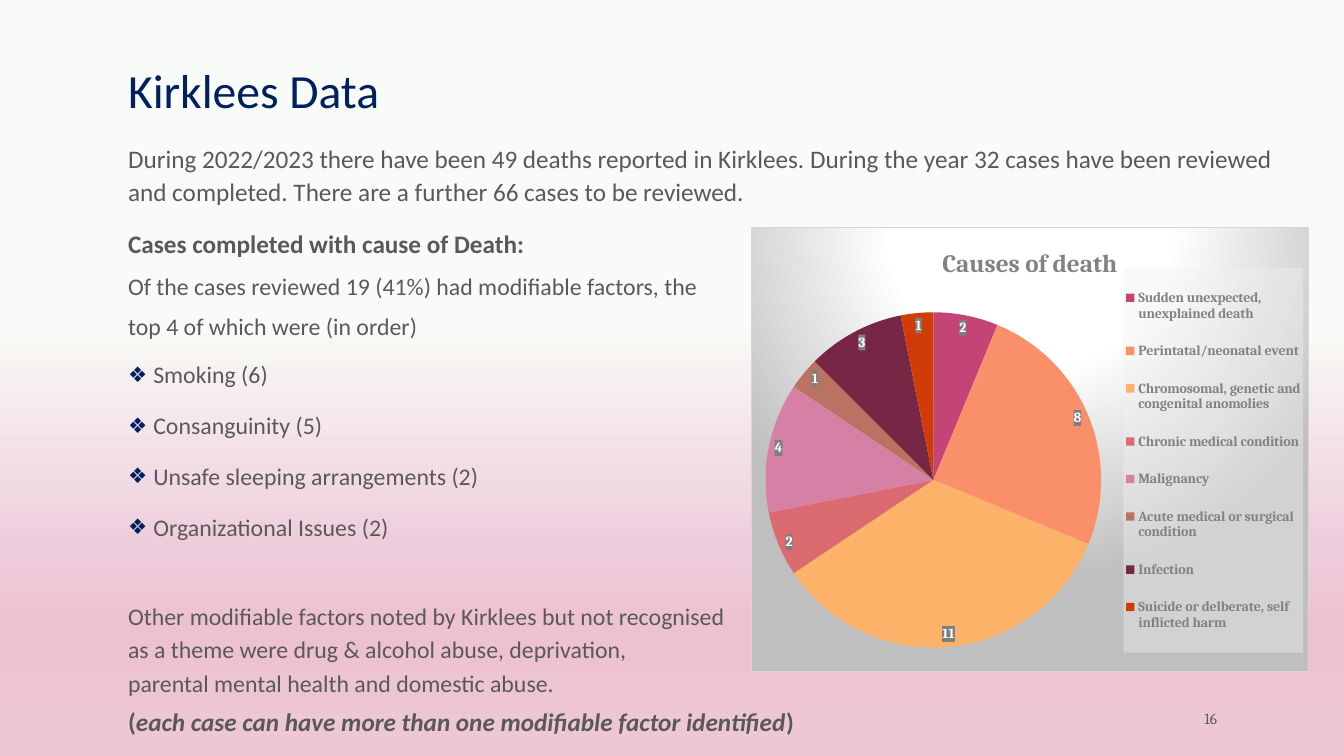
import pptx
import pptx.chart.data
import pptx.dml.color
import pptx.enum.chart
import pptx.enum.text
import pptx.oxml
import pptx.oxml.ns
import pptx.util
from pptx.util import Inches

COLORS = {
    "title": "002060", "body": "595959", "chart_text": "828282",
    "label": "FFFFFF", "label_box": "7F7F7F", "legend_box": "F2F2F2",
    "border": "D6D6D6",
}
BACKGROUND = [(43, "F8FBF7"), (73, "EFCCDB"), (83, "ECC1D1"), (100, "EDC7D6")]
CHART_GLOW = [(0, "FFFFFF"), (39, "FFFFFF"), (100, "BFBFBF")]
DOWNWARD = '<a:lin ang="5400000" scaled="0"/>'
FROM_TOP = ('<a:path path="circle"><a:fillToRect l="50000" t="-80000" '
            'r="50000" b="180000"/></a:path>')

# Each paragraph: runs of (text, style), size, line spacing, space before, bulleted
PARAGRAPHS = [
    ([("During 2022/2023 there have been 49 deaths reported in Kirklees. During the "
       "year 32 cases have been reviewed and completed. There are a further 66 cases "
       "to be reviewed.", "")], 18, 1.1, 18, False),
    ([("Cases completed with cause of Death:", "b")], 18, 0.9, 18, False),
    ([("Of the cases reviewed 19 (41%) had modifiable factors, the", "")],
     17, 0.5, 18, False),
    ([("top 4 of which were (in order)", "")], 17, 0.5, 18, False),
    *[([(factor, "")], 17, 0.9, 18, True) for factor in (
        "Smoking (6)", "Consanguinity (5)", "Unsafe sleeping arrangements (2)",
        "Organizational Issues (2)")],
    ([("Other modifiable factors noted by Kirklees but not recognised", "")],
     17, 0.3, 54.7, False),
    ([("as a theme were drug & alcohol abuse, deprivation,", "")], 17, 0.3, 18, False),
    ([("parental mental health and domestic abuse.", "")], 17, 0.3, 18, False),
    ([("(", "b"),
      ("each case can have more than one modifiable factor identified", "bi"),
      (")", "b")], 18, 0.5, 18, False),
]
CAUSES = [
    ("Sudden unexpected, unexplained death", 2, "C44475"),
    ("Perintatal/neonatal event", 8, "FA906A"),
    ("Chromosomal, genetic and congenital anomolies", 11, "FCB268"),
    ("Chronic medical condition", 2, "DB6B70"),
    ("Malignancy", 4, "D680A5"),
    ("Acute medical or surgical condition", 1, "BA7362"),
    ("Infection", 3, "782646"),
    ("Suicide or delberate, self inflicted harm", 1, "CF3C07"),
]


def xml(text):
    """Parse a fragment whose root carries no namespace declarations."""
    tag, rest = text.split(">", 1)
    slash = "/" if tag.endswith("/") else ""
    return pptx.oxml.parse_xml(
        f"{tag.rstrip('/')} {pptx.oxml.ns.nsdecls('a', 'c')}{slash}>{rest}")


def gradient(stops, direction):
    stop_xml = "".join(f'<a:gs pos="{position * 1000}"><a:srgbClr val="{color}"/></a:gs>'
                       for position, color in stops)
    return f"<a:gradFill><a:gsLst>{stop_xml}</a:gsLst>{direction}</a:gradFill>"


def clear_box(color, percent):
    """Chart-part properties with a partly transparent fill."""
    return xml(f'<c:spPr><a:solidFill><a:srgbClr val="{color}">'
               f'<a:alpha val="{percent * 1000}"/></a:srgbClr></a:solidFill></c:spPr>')


def chart_layout(x, y, w, h, target=""):
    """Manual placement as fractions of the chart area."""
    return xml(f'<c:layout><c:manualLayout>{target}<c:xMode val="edge"/>'
               f'<c:yMode val="edge"/><c:x val="{x}"/><c:y val="{y}"/><c:w val="{w}"/>'
               f'<c:h val="{h}"/></c:manualLayout></c:layout>')


class SlideBuilder:
    def __init__(self, presentation):
        self.slide = presentation.slides.add_slide(presentation.slide_layouts[1])

    def style(self, font, size, color, name="Calibri", bold=False, italic=False):
        font.name, font.size = name, pptx.util.Pt(size)
        font.bold, font.italic = bold, italic
        font.color.rgb = pptx.dml.color.RGBColor.from_string(COLORS[color])

    def place(self, shape, left, top, width, height):
        shape.left, shape.top = Inches(left), Inches(top)
        shape.width, shape.height = Inches(width), Inches(height)

    def background(self, stops):
        self.slide.background.fill.solid()
        solid = self.slide.element.find(".//" + pptx.oxml.ns.qn("p:bgPr"))[0]
        solid.getparent().replace(solid, xml(gradient(stops, DOWNWARD)))

    def title(self, text, *box):
        heading = self.slide.shapes.title
        self.place(heading, *box)
        frame = heading.text_frame
        frame.text = text
        frame.auto_size = pptx.enum.text.MSO_AUTO_SIZE.NONE
        frame.vertical_anchor = pptx.enum.text.MSO_ANCHOR.BOTTOM
        paragraph = frame.paragraphs[0]
        paragraph.alignment = pptx.enum.text.PP_ALIGN.LEFT
        paragraph.line_spacing = 0.9
        self.style(paragraph.runs[0].font, 34, "title")

    def body(self, paragraphs, *box):
        findings = self.slide.placeholders[1]
        self.place(findings, *box)
        frame = findings.text_frame
        frame.auto_size = pptx.enum.text.MSO_AUTO_SIZE.NONE
        for number, (runs, size, spacing, before, bulleted) in enumerate(paragraphs):
            paragraph = frame.add_paragraph() if number else frame.paragraphs[0]
            paragraph.line_spacing = spacing
            paragraph.space_before = pptx.util.Pt(before)
            self.bullet(paragraph, bulleted)
            for text, emphasis in runs:
                run = paragraph.add_run()
                run.text = text
                self.style(run.font, size, "body",
                           bold="b" in emphasis, italic="i" in emphasis)

    def bullet(self, paragraph, bulleted):
        properties = paragraph._p.get_or_add_pPr()
        indent = Inches(0.25) if bulleted else 0
        properties.set("marL", str(indent))
        properties.set("indent", str(-indent))
        if bulleted:
            properties.append(xml(
                f'<a:buClr><a:srgbClr val="{COLORS["title"]}"/></a:buClr>'))
            properties.append(xml('<a:buSzPct val="90000"/>'))
            properties.append(xml('<a:buChar char="❖"/>'))
        else:
            properties.append(xml("<a:buNone/>"))

    def page_number(self, text, *box):
        frame = self.slide.shapes.add_textbox(*map(Inches, box)).text_frame
        frame.word_wrap = True
        frame.text = text
        frame.vertical_anchor = pptx.enum.text.MSO_ANCHOR.MIDDLE
        frame.paragraphs[0].alignment = pptx.enum.text.PP_ALIGN.RIGHT
        self.style(frame.paragraphs[0].runs[0].font, 11, "body", "Cambria")

    def pie(self, title, slices, *box):
        data = pptx.chart.data.CategoryChartData()
        data.categories = [cause for cause, _, _ in slices]
        data.add_series(title, [deaths for _, deaths, _ in slices])
        chart = self.slide.shapes.add_chart(
            pptx.enum.chart.XL_CHART_TYPE.PIE, *map(Inches, box), data).chart
        self.style(chart.font, 10, "body", "Cambria")
        chart.font._element.getparent().getparent().getparent().addprevious(xml(
            f'<c:spPr>{gradient(CHART_GLOW, FROM_TOP)}<a:ln w="9525"><a:solidFill>'
            f'<a:srgbClr val="{COLORS["border"]}"/></a:solidFill></a:ln></c:spPr>'))

        chart.has_title = True
        chart.chart_title.include_in_layout = False
        heading = chart.chart_title.text_frame
        heading.text = title
        self.style(heading.paragraphs[0].runs[0].font, 18, "chart_text", "Cambria", True)

        plot = chart.plots[0]
        plot.vary_by_categories = True
        for number, (_, _, color) in enumerate(slices):
            fill = plot.series[0].points[number].format.fill
            fill.solid()
            fill.fore_color.rgb = pptx.dml.color.RGBColor.from_string(color)
        plot_area = plot._element.getparent()
        for layout in plot_area.findall(pptx.oxml.ns.qn("c:layout")):
            plot_area.remove(layout)
        plot_area.insert(0, chart_layout(0.025, 0.19, 0.603, 0.757,
                                         '<c:layoutTarget val="inner"/>'))

        labels = plot.series[0].data_labels
        labels.show_value = True
        labels.position = pptx.enum.chart.XL_LABEL_POSITION.BEST_FIT
        self.style(labels.font, 10, "label", "Cambria", True)
        labels._element.find(pptx.oxml.ns.qn("c:txPr")).addprevious(
            clear_box(COLORS["label_box"], 75))

        chart.has_legend = True
        legend = chart.legend
        legend.position = pptx.enum.chart.XL_LEGEND_POSITION.RIGHT
        legend.include_in_layout = False
        self.style(legend.font, 10, "chart_text", "Cambria", True)
        legend._element.find(pptx.oxml.ns.qn("c:txPr")).addprevious(
            clear_box(COLORS["legend_box"], 39))
        for layout in legend._element.findall(pptx.oxml.ns.qn("c:layout")):
            legend._element.remove(layout)
        legend._element.find(pptx.oxml.ns.qn("c:legendPos")).addnext(
            chart_layout(0.668, 0.092, 0.323, 0.865))


def main():
    presentation = pptx.Presentation()
    presentation.slide_width, presentation.slide_height = Inches(13.33), Inches(7.5)
    builder = SlideBuilder(presentation)
    builder.background(BACKGROUND)
    builder.title("Kirklees Data", 1.17, 0.5, 11, 0.73)
    builder.body(PARAGRAPHS, 1.17, 1.34, 11.89, 6.04)
    builder.page_number("16", 10.97, 7, 1.2, 0.25)
    builder.pie("Causes of death", CAUSES, 7.45, 2.25, 5.53, 4.42)
    presentation.save("out.pptx")


if __name__ == "__main__":
    main()
